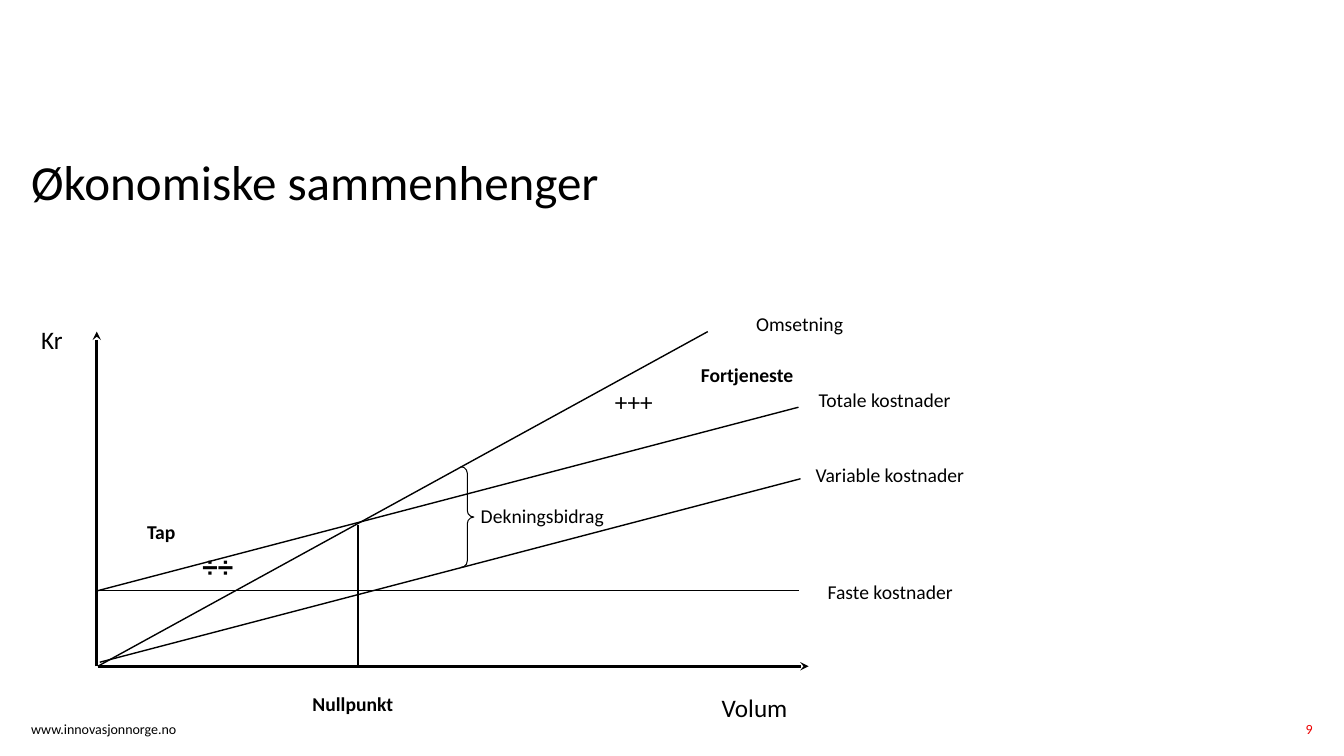
from pptx import Presentation
from pptx.dml.color import RGBColor
from pptx.enum import shapes as shp, text as txt
from pptx.oxml.ns import qn
from pptx.util import Inches, Pt
from lxml import etree

COLORS = {"ink": "000000", "page": "ED0000"}
FONT = "Calibri"


def paint(name):
    return RGBColor.from_string(COLORS[name])


def label(slide, words, x, y, w, h, size=14, bold=False, font=FONT,
          color="ink", align="LEFT", wrap=True, inset=True, spacing=None):
    """Place one paragraph of text in a box given in inches."""
    box = slide.shapes.add_textbox(Inches(x), Inches(y), Inches(w), Inches(h))
    frame = box.text_frame
    frame.word_wrap = wrap
    frame.vertical_anchor = txt.MSO_ANCHOR.TOP
    frame.margin_left = frame.margin_right = Inches(0.1 if inset else 0)
    frame.margin_top = frame.margin_bottom = Inches(0.05 if inset else 0)
    para = frame.paragraphs[0]
    para.alignment = getattr(txt.PP_ALIGN, align)
    if spacing:
        para.line_spacing = spacing
    run = para.add_run()
    run.text = words
    run.font.name = font
    run.font.size = Pt(size)
    run.font.bold = bold
    run.font.color.rgb = paint(color)


def line(slide, start, end, width=1, arrow=False):
    link = slide.shapes.add_connector(
        shp.MSO_CONNECTOR.STRAIGHT, *(Inches(v) for v in (*start, *end)))
    link.line.color.rgb = paint("ink")
    link.line.width = Pt(width)
    props = link._element.spPr
    if arrow:
        etree.SubElement(props.find(qn("a:ln")), qn("a:tailEnd"), type="stealth")
    etree.SubElement(props, qn("a:effectLst"))


def brace(slide, x, y, w, h):
    mark = slide.shapes.add_shape(
        shp.MSO_SHAPE.RIGHT_BRACE, Inches(x), Inches(y), Inches(w), Inches(h))
    mark.adjustments[0] = mark.adjustments[1] = 0.5
    mark.shadow.inherit = False
    mark.fill.background()
    mark.line.color.rgb = paint("ink")
    mark.line.width = Pt(0.75)


def header(slide, x, y, w, h):
    label(slide, "Økonomiske sammenhenger", x, y, w, h, size=35,
          inset=False, spacing=0.9)


def footer(slide, x, y, w, h):
    label(slide, "www.innovasjonnorge.no", x, y, 2.85, h, size=10, inset=False)
    label(slide, "9", x + w - 1.08, y, 1.08, h, size=10, color="page",
          align="RIGHT", inset=False)


def diagram(slide, x, y, w, h):
    """Draw the break-even diagram; x, y + h is the origin of its axes."""
    base = y + h
    span = w - 0.1          # length of the cost lines
    fixed = base - 0.75     # height of the fixed costs
    rise = 1.82             # growth of the variable costs

    line(slide, (x, base), (x + w, base), width=2, arrow=True)
    line(slide, (x - 0.01, base), (x - 0.01, y), width=2, arrow=True)
    line(slide, (x, fixed), (x + span, fixed))
    line(slide, (x, base), (x + 6.05, y))
    line(slide, (x, fixed), (x + span, fixed - rise))
    line(slide, (x + 0.02, base - 0.04), (x + span + 0.02, base - 0.04 - rise))
    line(slide, (x + 2.58, base - 1.4), (x + 2.58, base), width=2)
    brace(slide, x + 3.6, y + 1.34, 0.13, 1)

    labels = (
        ("Omsetning", 6.43, -0.24, 1.08, {}),
        ("Totale kostnader", 7.05, 0.51, 3.58, {}),
        ("Variable kostnader", 7.02, 1.25, 1.69, {}),
        ("Faste kostnader", 7.14, 2.41, 1.46, {}),
        ("Dekningsbidrag", 3.7, 1.66, 1.44, {}),
        ("Fortjeneste", 4.86, 0.26, 3.16, {"bold": True, "align": "CENTER"}),
        ("Tap", 0.39, 1.82, 1.02, {"bold": True}),
        ("Nullpunkt", 2.03, 3.53, 1.01, {"bold": True}),
        ("Kr", -0.66, -0.12, 0.42, {"size": 18}),
        ("Volum", 6.09, 3.53, 1.72, {"size": 18}),
        ("+++", 5.03, 0.49, 1, {"size": 18}),
        ("÷÷", 0.94, 2.11, 0.75, {"size": 20, "bold": True, "font": "Arial"}),
    )
    for words, dx, dy, width, style in labels:
        label(slide, words, x + dx, y + dy, width, 0.34,
              wrap=width > 1.7, **style)


def main():
    deck = Presentation()
    deck.slide_width = Inches(13.33)
    deck.slide_height = Inches(7.5)
    slide = deck.slides.add_slide(deck.slide_layouts[6])
    header(slide, 0.31, 1.57, 7.05, 1.43)
    diagram(slide, 0.97, 3.29, 7.05, 3.32)
    footer(slide, 0.31, 7.15, 12.71, 0.2)
    deck.save("out.pptx")


if __name__ == "__main__":
    main()
